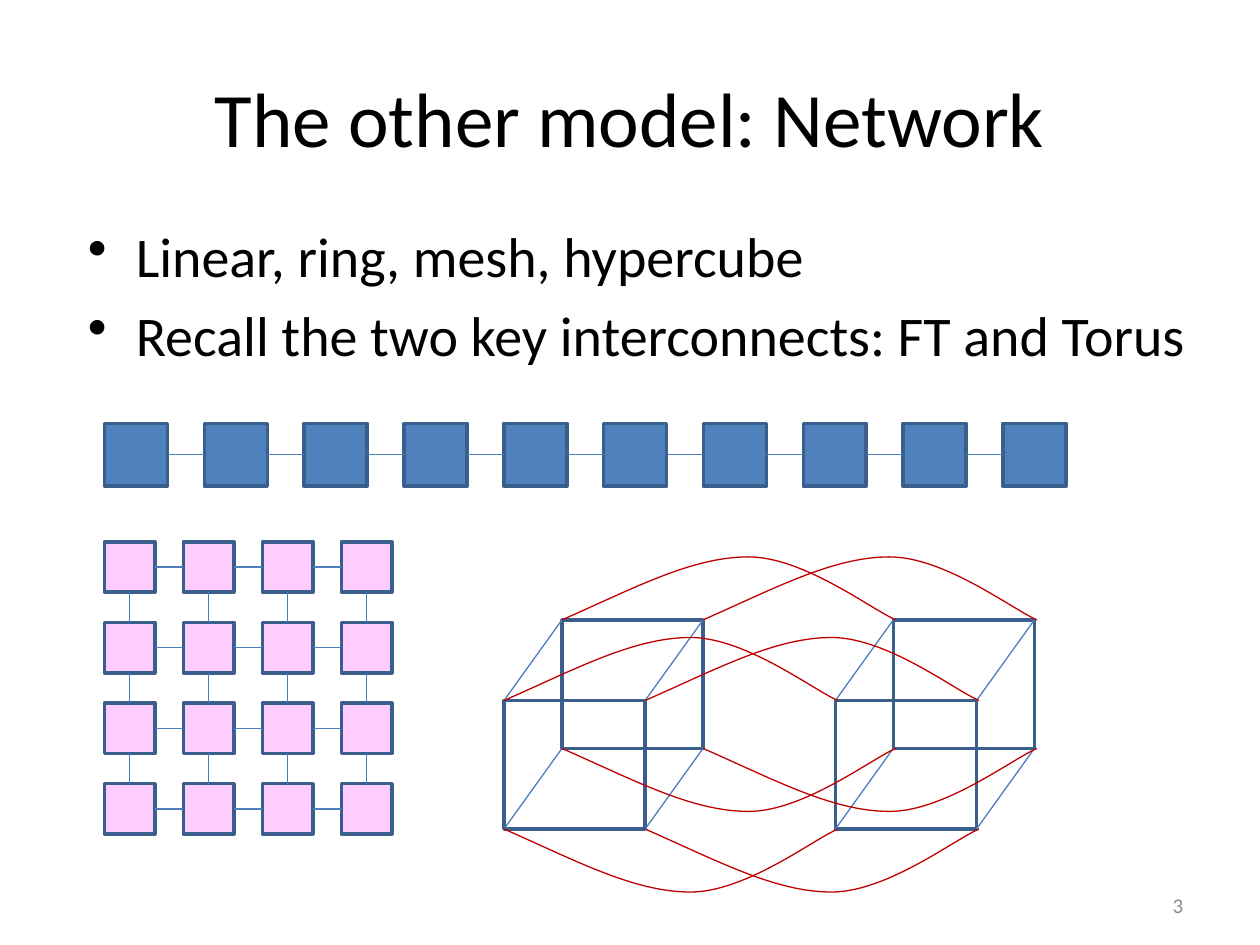
from dataclasses import dataclass

from lxml import etree
from pptx import Presentation
from pptx.dml.color import RGBColor as RGB
from pptx.enum.shapes import MSO_CONNECTOR as Link, MSO_SHAPE as Shape
from pptx.enum.text import MSO_ANCHOR as Anchor, PP_ALIGN as Align
from pptx.oxml.ns import qn
from pptx.util import Inches, Pt


@dataclass(frozen=True)
class Theme:
    font: str = "Calibri"
    ink: RGB = RGB(0x00, 0x00, 0x00)
    gray: RGB = RGB(0x8C, 0x8C, 0x8C)
    blue: RGB = RGB(0x4F, 0x81, 0xBD)
    pink: RGB = RGB(0xFF, 0xCC, 0xFF)
    edge: RGB = RGB(0x3A, 0x5F, 0x8C)
    wire: RGB = RGB(0x4B, 0x7E, 0xBC)
    red: RGB = RGB(0xC0, 0x00, 0x00)
    head: Pt = Pt(44)
    body: Pt = Pt(32)
    small: Pt = Pt(12)
    thick: Pt = Pt(2)
    thin: Pt = Pt(0.75)


THEME = Theme()

# Start, then two cubic segments of three points each, from the start corner
ARC = [(0, 0), (0.57, 0.25), (1.03, 0.5), (1.48, 0.5),
       (1.92, 0.5), (2.46, 0.08), (2.65, 0)]


def add_text(shapes, box, lines, size, color, align, anchor):
    frame = shapes.add_textbox(*map(Inches, box)).text_frame
    frame.word_wrap = True
    frame.vertical_anchor = anchor
    frame.text = "\n".join(lines)
    for para in frame.paragraphs:
        para.alignment = align
        para.font.name = THEME.font
        para.font.size = size
        para.font.color.rgb = color
    return frame


def add_list(shapes, box, lines):
    frame = add_text(shapes, box, lines, THEME.body, THEME.ink,
                     Align.LEFT, Anchor.TOP)
    for para in frame.paragraphs:
        para.space_before = Pt(6.4)
        props = para._p.get_or_add_pPr()
        props.set("marL", str(Inches(0.38)))
        props.set("indent", str(Inches(-0.38)))
        # Schema order: the bullet comes before the default run properties
        mark = etree.Element(qn("a:buChar"), char="•")
        props.find(qn("a:defRPr")).addprevious(mark)


def add_rect(shapes, left, top, width, height, fill=None):
    rect = shapes.add_shape(Shape.RECTANGLE,
                            *map(Inches, (left, top, width, height)))
    rect.shadow.inherit = False
    if fill is None:
        rect.fill.background()
    else:
        rect.fill.solid()
        rect.fill.fore_color.rgb = fill
    rect.line.color.rgb = THEME.edge
    rect.line.width = THEME.thick
    return rect


def add_wire(shapes, start=(0, 0), end=(0, 0)):
    wire = shapes.add_connector(Link.STRAIGHT, *map(Inches, (*start, *end)))
    wire.line.color.rgb = THEME.wire
    wire.line.width = THEME.thin
    etree.SubElement(wire._element.spPr, qn("a:effectLst"))
    return wire


def join(shapes, first, out, second, into):
    """Wire two rectangles together at the given sides."""
    wire = add_wire(shapes)
    wire.begin_connect(first, out)
    wire.end_connect(second, into)


def add_grid(shapes, box, rows, cols, side, fill):
    """Fill the box with evenly spaced squares, wired to their neighbours."""
    left, top, width, height = box
    across = (width - side) / max(cols - 1, 1)
    down = (height - side) / max(rows - 1, 1)
    group = shapes.add_group_shape().shapes
    nodes = [[add_rect(group, left + col * across, top + row * down,
                       side, side, fill)
              for col in range(cols)] for row in range(rows)]
    for line in nodes:
        for first, second in zip(line, line[1:]):
            join(group, first, 3, second, 1)
    for upper, lower in zip(nodes, nodes[1:]):
        for first, second in zip(upper, lower):
            join(group, first, 2, second, 0)


def add_arc(shapes, left, top, sign):
    """Draw a smooth link that bulges down (sign 1) or up (sign -1)."""
    points = [(Inches(left + x), Inches(top + sign * y)) for x, y in ARC]
    build = shapes.build_freeform(*points[0])
    build.add_line_segments(points[1:], close=False)
    arc = build.convert_to_shape()
    arc.shadow.inherit = False
    arc.fill.background()
    arc.line.color.rgb = THEME.red
    arc.line.width = THEME.thin
    # Turn each run of three line points into one cubic segment
    track = next(arc._element.iter(qn("a:path")))
    steps = track.findall(qn("a:lnTo"))
    for i in range(0, len(steps), 3):
        curve = etree.SubElement(track, qn("a:cubicBezTo"))
        for step in steps[i:i + 3]:
            curve.append(step[0])
            track.remove(step)


def cube_faces(box, face):
    """Return the top left corners of the front and back faces."""
    left, top, width, height = box
    return (left, top + height - face[1]), (left + width - face[0], top)


def add_cube(shapes, box, face):
    front, back = cube_faces(box, face)
    for spot in (front, back):
        add_rect(shapes, *spot, *face)
    for x in (0, face[0]):
        for y in (0, face[1]):
            add_wire(shapes, (back[0] + x, back[1] + y),
                     (front[0] + x, front[1] + y))


def add_hypercube(shapes, box, cube, face):
    """Place a cube at each end of the box and link matching corners."""
    left, top, width, height = box
    first = (left, top, cube, height)
    add_cube(shapes, first, face)
    add_cube(shapes, (left + width - cube, top, cube, height), face)
    front, back = cube_faces(first, face)
    for spot in (back, front):
        for y, sign in ((0, -1), (face[1], 1)):
            pair = shapes.add_group_shape().shapes
            for x in (0, face[0]):
                add_arc(pair, spot[0] + x, spot[1] + y, sign)


def main():
    deck = Presentation()
    deck.slide_width, deck.slide_height = Inches(10), Inches(7.5)
    shapes = deck.slides.add_slide(deck.slide_layouts[6]).shapes
    add_text(shapes, (0.5, 0.3, 9, 1.25), ["The other model: Network"],
             THEME.head, THEME.ink, Align.CENTER, Anchor.MIDDLE)
    add_list(shapes, (0.6, 1.71, 9, 4.95),
             ["Linear, ring, mesh, hypercube",
              "Recall the two key interconnects: FT and Torus"])
    add_text(shapes, (7.16, 6.98, 2.33, 0.4), ["3"],
             THEME.small, THEME.gray, Align.RIGHT, Anchor.MIDDLE)
    add_grid(shapes, (0.83, 3.36, 7.63, 0.5), 1, 10, 0.5, THEME.blue)
    add_grid(shapes, (0.83, 4.3, 2.28, 2.32), 4, 4, 0.4, THEME.pink)
    add_hypercube(shapes, (4, 4.92, 4.21, 1.66), 1.58, (1.12, 1.02))
    deck.save("out.pptx")


if __name__ == "__main__":
    main()
